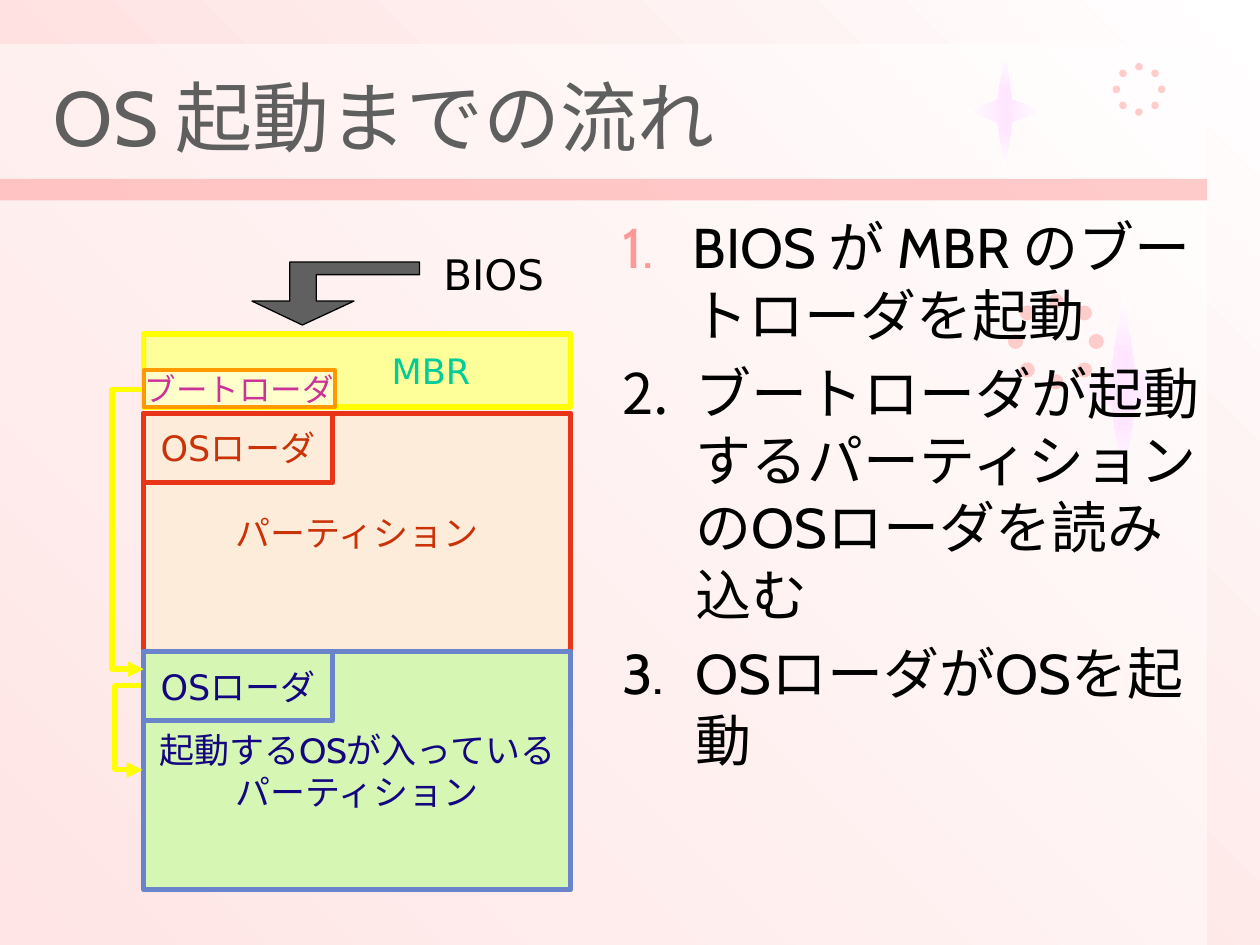
from math import cos, pi, sin

from lxml import etree
from pptx import Presentation
from pptx.dml.color import RGBColor
from pptx.enum.shapes import MSO_CONNECTOR, MSO_SHAPE as SHAPE
from pptx.enum.text import MSO_ANCHOR as ANCHOR, PP_ALIGN as ALIGN
from pptx.oxml.ns import qn
from pptx.util import Inches, Pt

C = {
    "pink": "FFCCCC", "rose": "FF9999", "lilac": "FFCCFF", "white": "FFFFFF",
    "title": "5F5F5F", "black": "000000", "arrow": "606060",
    "yellow": "FFFF00", "mbr_fill": "FFFF99", "mbr_text": "00CC99",
    "boot_fill": "FFFFCC", "boot_line": "FF9900", "boot_text": "CC3399",
    "part_fill": "FEECDA", "part_line": "E93517", "part_text": "CA3208",
    "os_fill": "D5F7B3", "os_line": "6A84CC", "os_text": "140581",
}
CABIN, DEJAVU = "Cabin", "DejaVu Sans"


def rgb(name):
    return RGBColor.from_string(C[name])


def sub(parent, tag, **attrs):
    return etree.SubElement(parent, qn(tag), attrs)


def set_gradient(fill, start, end, angle=45):
    fill.gradient()
    fill.gradient_angle = angle
    for stop, name, position in zip(fill.gradient_stops, (start, end), (0, 1)):
        stop.color.rgb = rgb(name)
        stop.position = position


def set_text(shape, lines, size=20, font=CABIN, color="black",
             align=ALIGN.LEFT, anchor=ANCHOR.TOP, wrap=False):
    """Fill the shape with one paragraph per line and return its text frame."""
    tf = shape.text_frame
    tf.word_wrap, tf.vertical_anchor = wrap, anchor
    for i, line in enumerate(lines):
        p = tf.paragraphs[0] if i == 0 else tf.add_paragraph()
        p.alignment = align
        r = p.add_run()
        r.text = line
        r.font.size, r.font.name = Pt(size), font
        r.font.color.rgb = rgb(color)
    return tf


def add_text(s, box, lines, **fmt):
    return set_text(s.shapes.add_textbox(*map(Inches, box)), lines, **fmt)


def add_shape(s, kind, box, fill, line=None, width=3, alpha=None):
    sp = s.shapes.add_shape(kind, *map(Inches, box))
    sp.shadow.inherit = False
    sp.fill.solid()
    sp.fill.fore_color.rgb = rgb(fill)
    if alpha:
        color = sp.fill._xPr.find(".//" + qn("a:srgbClr"))
        sub(color, "a:alpha", val=str(alpha * 1000))
    if line:
        sp.line.color.rgb = rgb(line)
        sp.line.width = Pt(width)
    else:
        sp.line.fill.background()
    return sp


def add_block(s, box, fill, line, lines, width=3, **fmt):
    sp = add_shape(s, SHAPE.RECTANGLE, box, fill, line, width)
    return set_text(sp, lines, align=ALIGN.CENTER, anchor=ANCHOR.MIDDLE, **fmt)


def add_dot_ring(s, cx, cy, radius, dot):
    for i in range(8):
        x = cx + radius * cos(i * pi / 4) - dot / 2
        y = cy + radius * sin(i * pi / 4) - dot / 2
        add_shape(s, SHAPE.OVAL, (x, y, dot, dot), "rose")


def add_star(s, box):
    sp = add_shape(s, SHAPE.STAR_4_POINT, box, "lilac")
    sp.adjustments[0] = 0.135
    set_gradient(sp.fill, "lilac", "white")
    grad = sp.fill._xPr.find(qn("a:gradFill"))
    grad.remove(grad.find(qn("a:lin")))
    center = sub(grad, "a:path", path="shape")
    sub(center, "a:fillToRect", l="50000", t="50000", r="50000", b="50000")


def add_elbow(s, x1, y1, x2, y2, bend):
    """Draw a bent arrow whose vertical leg stands at x = bend."""
    c = s.shapes.add_connector(MSO_CONNECTOR.ELBOW, *map(Inches, (x1, y1, x2, y2)))
    c.line.color.rgb = rgb("yellow")
    c.line.width = Pt(3)
    sub(c.line._get_or_add_ln(), "a:tailEnd", type="triangle")
    sp_pr = c._element.spPr
    sub(sp_pr, "a:effectLst")
    ratio = round((bend - x1) / (x2 - x1) * 100000)
    guides = sp_pr.find(qn("a:prstGeom")).get_or_add_avLst()
    sub(guides, "a:gd", name="adj1", fmla=f"val {ratio}")


def add_bios_arrow(s):
    points = [(2.4, 2.58), (2.81, 2.39), (2.51, 2.39), (2.51, 2.18), (3.33, 2.18),
              (3.33, 2.08), (2.3, 2.08), (2.3, 2.39), (2, 2.39)]
    start, *rest = [(Inches(x), Inches(y)) for x, y in points]
    builder = s.shapes.build_freeform(*start)
    builder.add_line_segments(rest, close=True)
    sp = builder.convert_to_shape()
    sp.shadow.inherit = False
    sp.fill.solid()
    sp.fill.fore_color.rgb = rgb("arrow")
    sp.line.color.rgb = rgb("black")
    sp.line.width = Pt(0.75)


def add_steps(s, box, lines):
    tf = add_text(s, box, lines, size=32, wrap=True)
    for i, p in enumerate(tf.paragraphs):
        p.space_before = Pt(6.4 if i else 0)
        indent = Inches(0.58 if i else 0.56)
        p_pr = p._p.get_or_add_pPr()
        p_pr.set("marL", str(indent))
        p_pr.set("indent", str(-indent))
        color = sub(p_pr, "a:buClr")
        sub(color, "a:srgbClr", val=C["black" if i else "rose"])
        sub(p_pr, "a:buFont", typeface=CABIN)
        sub(p_pr, "a:buAutoNum", type="arabicPeriod")


def add_backdrop(s):
    set_gradient(s.background.fill, "pink", "white")
    add_dot_ring(s, 9.04, 0.71, 0.18, 0.06)
    add_dot_ring(s, 8.38, 2.71, 0.32, 0.12)
    add_star(s, (7.67, 0.42, 0.61, 0.92))
    add_star(s, (8.42, 2.33, 0.99, 1.5))
    add_shape(s, SHAPE.RECTANGLE, (0, 0.35, 9.58, 7.15), "white", alpha=50)
    add_shape(s, SHAPE.RECTANGLE, (0, 1.42, 9.58, 0.17), "rose", alpha=50)


def add_disk(s):
    left, width = 1.14, 3.39
    tf = add_block(s, (left, 2.65, width, 0.58), "mbr_fill", "yellow", ["MBR"],
                   font=DEJAVU, color="mbr_text", wrap=True)
    tf.margin_left, tf.margin_right = Inches(1.17), 0
    add_text(s, (3.42, 1.92, 1.06, 0.5), ["BIOS"], size=24, font=DEJAVU)
    add_bios_arrow(s)
    partitions = [("part", 3.28, ["パーティション"]),
                  ("os", 5.17, ["起動するOSが入っている", "パーティション"])]
    for key, top, label in partitions:
        fill, line, color = f"{key}_fill", f"{key}_line", f"{key}_text"
        add_block(s, (left, top, width, 1.89), fill, line, label, color=color)
        add_block(s, (left, top, 1.5, 0.55), fill, line, ["OSローダ"],
                  font=DEJAVU, color=color)
    add_elbow(s, 1.12, 3.09, 1.14, 5.31, bend=0.89)
    add_elbow(s, 1.12, 5.44, 1.13, 6.11, bend=0.91)
    add_block(s, (left, 2.94, 1.52, 0.29), "boot_fill", "boot_line",
              ["ブートローダ"], width=2.25, size=18, color="boot_text")


def main():
    prs = Presentation()
    prs.slide_width, prs.slide_height = Inches(10), Inches(7.5)
    s = prs.slides.add_slide(prs.slide_layouts[6])
    add_backdrop(s)
    add_text(s, (0.33, 0.42, 8.5, 1), ["OS 起動までの流れ"], size=44,
             color="title", anchor=ANCHOR.MIDDLE, wrap=True)
    add_steps(s, (4.84, 1.64, 4.84, 4.95), [
        "BIOS が MBR のブートローダを起動",
        "ブートローダが起動するパーティションのOSローダを読み込む",
        "OSローダがOSを起動",
    ])
    add_disk(s)
    prs.save("out.pptx")


if __name__ == "__main__":
    main()
